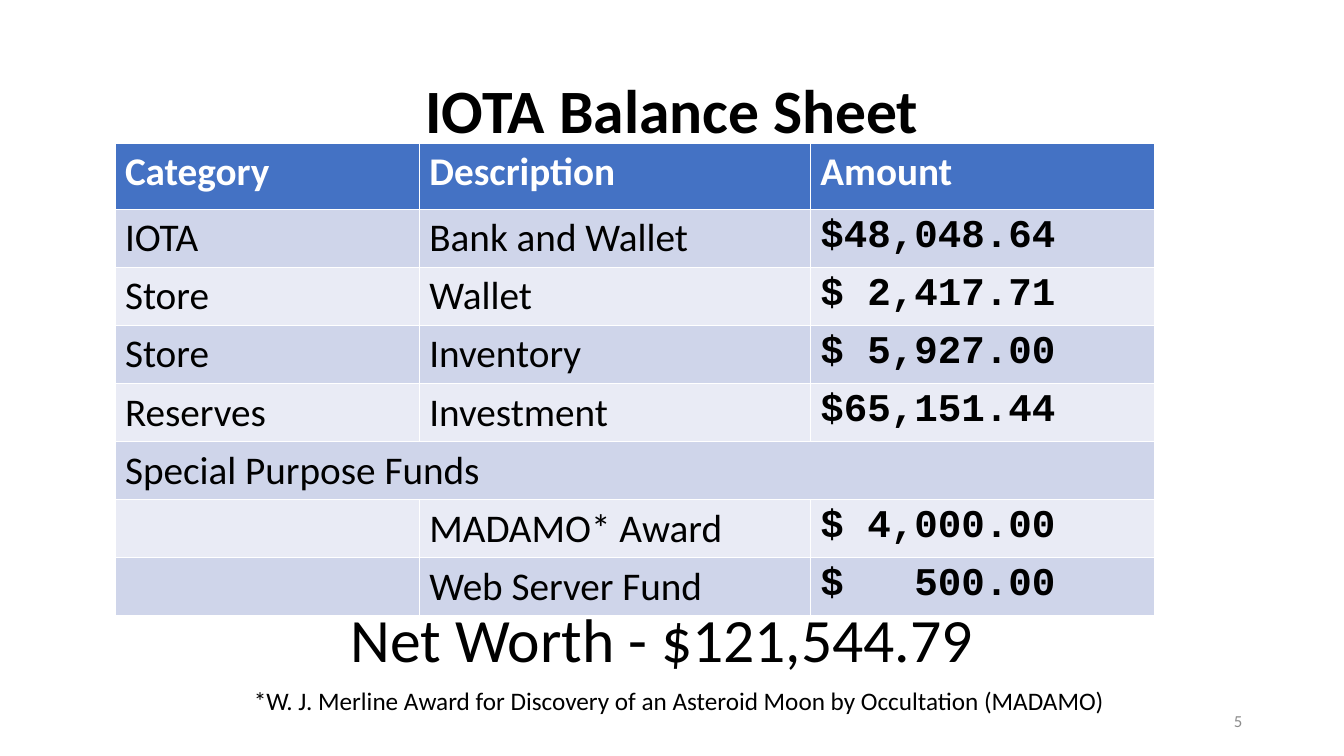
from pptx import Presentation
from pptx import util as u
from pptx.dml.color import RGBColor
from pptx.enum import text

WIDTH, HEIGHT = u.Inches(13.33), u.Inches(7.5)
COLORS = {"ink": "000000", "header": "4472C4", "odd": "CFD5EA",
          "even": "E9EBF5", "white": "FFFFFF", "number": "8C8C8C"}
COLUMNS = (22.65, 29.1, 25.65)
HEADER_ROW, BODY_ROW = 8.8, 7.5
HEADINGS = ("Category", "Description", "Amount")
FUNDS = (
    ("IOTA", "Bank and Wallet", 48048.64),
    ("Store", "Wallet", 2417.71),
    ("Store", "Inventory", 5927.00),
    ("Reserves", "Investment", 65151.44),
    ("Special Purpose Funds", "", None),
    ("", "MADAMO* Award", 4000.00),
    ("", "Web Server Fund", 500.00),
)


def across(percent):
    return round(WIDTH * percent / 100)


def down(percent):
    return round(HEIGHT * percent / 100)


def box(left, top, width, height):
    return across(left), down(top), across(width), down(height)


def write(tf, words, size, color="ink", bold=False, font="Calibri", align=None):
    p = tf.paragraphs[0]
    p.text = words
    p.font.name = font
    p.font.size = u.Pt(size)
    p.font.bold = bold
    p.font.color.rgb = RGBColor.from_string(COLORS[color])
    p.alignment = align
    return p


def add_title(slide, words):
    sp = slide.shapes.title
    sp.left, sp.top, sp.width, sp.height = box(6.9, 5.33, 86.25, 19.33)
    tf = sp.text_frame
    tf.vertical_anchor = text.MSO_ANCHOR.MIDDLE
    p = write(tf, words, 44, bold=True, align=text.PP_ALIGN.CENTER)
    p.line_spacing = 0.9


def add_text(slide, place, words, size, **style):
    tf = slide.shapes.add_textbox(*box(*place)).text_frame
    tf.word_wrap = True
    write(tf, words, size, **style)
    return tf


def fill_cell(cell, color):
    cell.fill.solid()
    cell.fill.fore_color.rgb = RGBColor.from_string(COLORS[color])


def add_balance_table(slide):
    height = HEADER_ROW + BODY_ROW * len(FUNDS)
    place = box(8.55, 18.93, sum(COLUMNS), height)
    table = slide.shapes.add_table(len(FUNDS) + 1, len(COLUMNS), *place).table
    for column, width in zip(table.columns, COLUMNS):
        column.width = across(width)
    for row in table.rows:
        row.height = down(BODY_ROW)
    table.rows[0].height = down(HEADER_ROW)

    for c, heading in enumerate(HEADINGS):
        cell = table.cell(0, c)
        fill_cell(cell, "header")
        write(cell.text_frame, heading, 28, "white", bold=True)

    for r, (category, description, amount) in enumerate(FUNDS, 1):
        for c in range(len(COLUMNS)):
            fill_cell(table.cell(r, c), "odd" if r % 2 else "even")
        for c, words in enumerate((category, description)):
            if words:
                write(table.cell(r, c).text_frame, words, 28)
        if amount is None:
            table.cell(r, 0).merge(table.cell(r, len(COLUMNS) - 1))
        else:
            write(table.cell(r, 2).text_frame, f"${amount:>9,.2f}", 28,
                  bold=True, font="Courier New")


def main():
    prs = Presentation()
    prs.slide_width, prs.slide_height = WIDTH, HEIGHT
    slide = prs.slides.add_slide(prs.slide_layouts[5])
    add_title(slide, "IOTA Balance Sheet")
    add_balance_table(slide)
    add_text(slide, (25.36, 78.8, 49.29, 11.2), "Net Worth - $121,544.79", 44)
    add_text(slide, (18.15, 90, 69.92, 5.33),
             "*W. J. Merline Award for Discovery of an Asteroid Moon "
             "by Occultation (MADAMO)", 18)
    number = add_text(slide, (70.67, 92.67, 22.5, 5.33), "5", 12,
                      color="number", align=text.PP_ALIGN.RIGHT)
    number.vertical_anchor = text.MSO_ANCHOR.MIDDLE
    prs.save("out.pptx")


if __name__ == "__main__":
    main()
